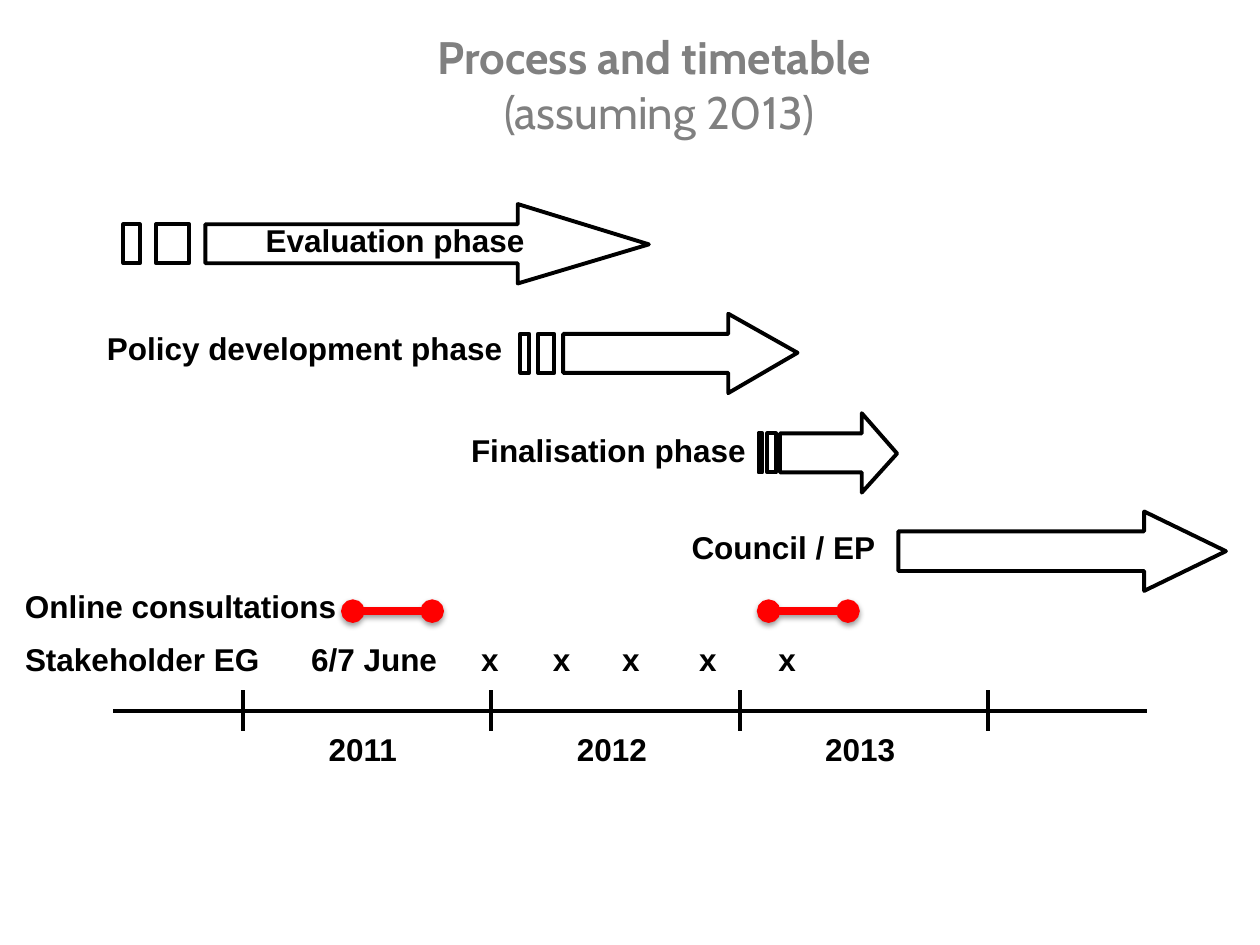
from pptx import Presentation
from pptx.dml.color import RGBColor
from pptx.enum.shapes import MSO_CONNECTOR, MSO_SHAPE
from pptx.enum.text import MSO_ANCHOR, MSO_AUTO_SIZE, PP_ALIGN
from pptx.oxml import parse_xml
from pptx.oxml.ns import nsdecls
from pptx.util import Pt

PX = 9144  # 100 px to the inch
COLORS = {name: RGBColor.from_string(value) for name, value in {
    "ink": "000000", "title": "808080", "consultation": "FF0000"}.items()}
SHADOW = (
    '<a:outerShdw blurRad="40000" dist="20000" dir="5400000" rotWithShape="0">'
    '<a:srgbClr val="000000"><a:alpha val="38000"/></a:srgbClr></a:outerShdw>')


def write_label(frame, text):
    frame.text = text
    frame.word_wrap = False
    para = frame.paragraphs[0]
    para.line_spacing = 0.8
    font = para.runs[0].font
    font.name, font.size, font.bold = "Arial", Pt(18), True
    font.color.rgb = COLORS["ink"]


def add_line(start, end, color, width, effect=""):
    line = slide.shapes.add_connector(
        MSO_CONNECTOR.STRAIGHT, *(value * PX for value in (*start, *end)))
    line.line.color.rgb = COLORS[color]
    line.line.width = Pt(width)
    line._element.spPr.append(parse_xml(
        f"<a:effectLst {nsdecls('a')}>{effect}</a:effectLst>"))
    return line


deck = Presentation()
deck.slide_width, deck.slide_height = 1000 * PX, 750 * PX
slide = deck.slides.add_slide(deck.slide_layouts[5])

# Title
title = slide.shapes.title
title.left, title.top, title.width, title.height = (
    value * PX for value in (90, 44, 867, 71))
frame = title.text_frame
frame.text = "Process and timetable \v(assuming 2013)"
frame.auto_size = MSO_AUTO_SIZE.NONE
frame.vertical_anchor = MSO_ANCHOR.BOTTOM
para = frame.paragraphs[0]
para.alignment = PP_ALIGN.CENTER
for span, bold in zip(para.runs, (True, False)):
    span.font.name, span.font.size, span.font.bold = "Cabin", Pt(26), bold
    span.font.color.rgb = COLORS["title"]

# Phase arrows: two stripes, then the arrow, all in 32nds of the width
ARROW_HEIGHT = 63
arrows = []
for left, top, width in ((98, 162, 417), (413, 249, 220), (602, 328, 110)):
    unit = width / 32
    upper, lower = top + ARROW_HEIGHT / 4, top + ARROW_HEIGHT * 3 / 4
    body, neck = left + 5 * unit, left + 24 * unit
    builder = slide.shapes.build_freeform(neck, top, scale=PX)
    builder.add_line_segments([
        (neck, upper), (body, upper), (body, lower), (neck, lower),
        (neck, top + ARROW_HEIGHT), (left + width, top + ARROW_HEIGHT / 2)])
    for first, last in ((2, 4), (0, 1)):
        near, far = left + first * unit, left + last * unit
        builder.move_to(near, upper)
        builder.add_line_segments([(near, lower), (far, lower), (far, upper)])
    arrows.append(builder.convert_to_shape())

council = slide.shapes.add_shape(
    MSO_SHAPE.RIGHT_ARROW, 713 * PX, 406 * PX, 260 * PX, ARROW_HEIGHT * PX)
council.adjustments[0], council.adjustments[1] = 0.5, 1.03
for arrow in (*arrows, council):
    arrow.shadow.inherit = False
    arrow.fill.background()
    arrow.line.color.rgb = COLORS["ink"]
    arrow.line.width = Pt(2.25)

frame = arrows[0].text_frame
write_label(frame, "Evaluation phase")
frame.vertical_anchor = MSO_ANCHOR.MIDDLE
frame.margin_left = 24 * PX
frame.paragraphs[0].alignment = PP_ALIGN.CENTER

# Time axis: a tick at each year's start, the year between ticks
AXIS, YEAR_WIDTH, FIRST_TICK = 564, 197, 193
add_line((90, AXIS), (910, AXIS), "ink", 2.25)
for index in range(4):
    tick = FIRST_TICK + index * YEAR_WIDTH
    add_line((tick, AXIS - 16), (tick, AXIS + 16), "ink", 2.25)

# Labels: text, left, top, width
MEETING_ROW = 509
labels = [
    ("Policy development phase", 75, 262, 334),
    ("Finalisation phase", 364, 343, 238),
    ("Council / EP", 539, 420, 166),
    ("Online consultations", 10, 467, 270),
    ("Stakeholder EG", 10, MEETING_ROW, 208),
    ("6/7 June", 237, MEETING_ROW, 121),
]
labels += [("x", left, MEETING_ROW, 34) for left in (372, 429, 484, 545, 608)]
labels += [(str(2011 + index), FIRST_TICK + 58 + index * YEAR_WIDTH, 580, 76)
           for index in range(3)]
for text, left, top, width in labels:
    box = slide.shapes.add_textbox(left * PX, top * PX, width * PX, 34 * PX)
    write_label(box.text_frame, text)

# Online consultation periods
for left in (280, 610):
    period = add_line((left, 485), (left + 63, 485), "consultation", 4.5, SHADOW)
    outline = period.line._get_or_add_ln()
    for end in ("headEnd", "tailEnd"):
        outline.append(parse_xml(f'<a:{end} {nsdecls("a")} type="oval"/>'))

deck.save("out.pptx")
